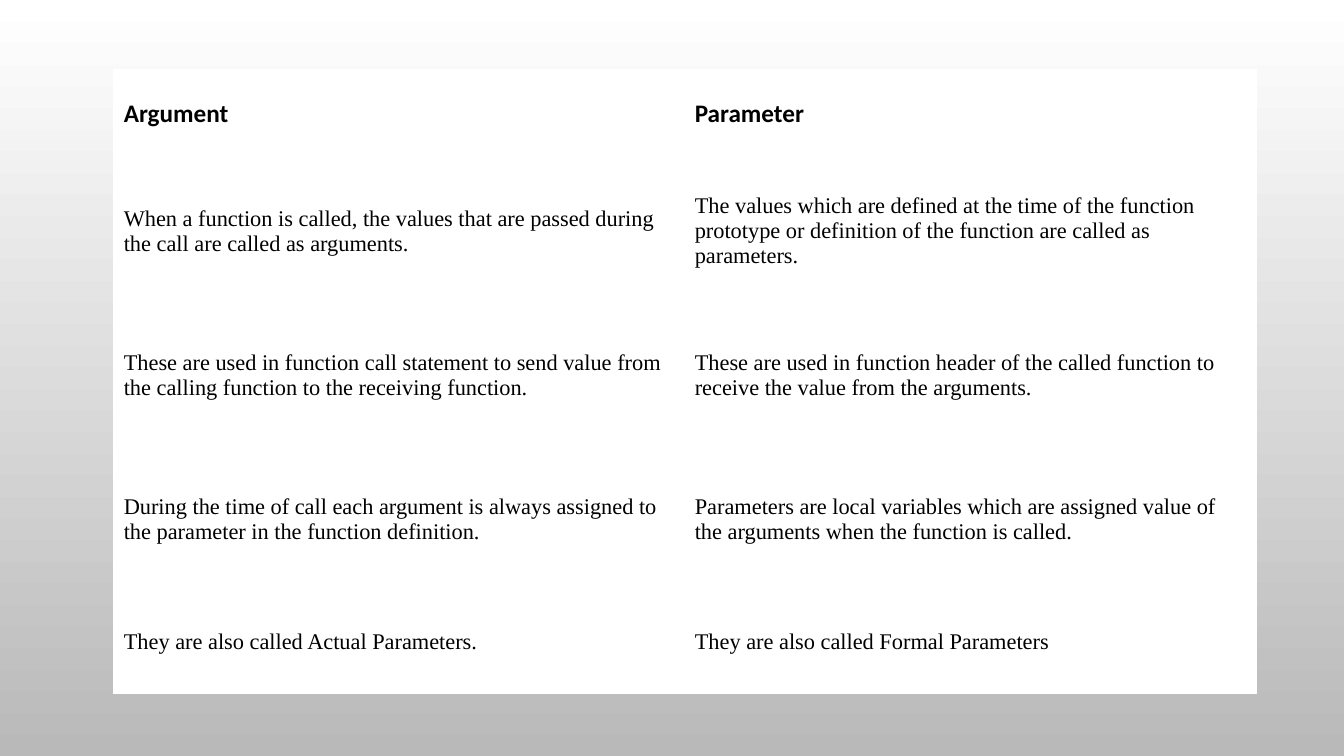
from pptx import Presentation
from pptx.dml.color import RGBColor
from pptx.enum.text import MSO_VERTICAL_ANCHOR as Anchor
from pptx.util import Cm, Pt

BLANK_LAYOUT = 6
COLUMN_WIDTH = 14.39
ROW_HEIGHTS = [2.26, 3.63, 3.63, 3.63, 2.57]

HEADER_FONT = {"name": "Calibri", "size": Pt(18), "bold": True}
BODY_FONT = {"name": "Times New Roman", "size": Pt(16), "bold": False}

COMPARISON = [
    ("Argument", "Parameter"),
    ("When a function is called, the values that are passed during the call "
     "are called as arguments.",
     "The values which are defined at the time of the function prototype or "
     "definition of the function are called as parameters."),
    ("These are used in function call statement to send value from the "
     "calling function to the receiving function.",
     "These are used in function header of the called function to receive "
     "the value from the arguments."),
    ("During the time of call each argument is always assigned to the "
     "parameter in the function definition.",
     "Parameters are local variables which are assigned value of the "
     "arguments when the function is called."),
    ("They are also called Actual Parameters.",
     "They are also called Formal Parameters"),
]


def color(hex_value):
    return RGBColor.from_string(hex_value)


def set_attributes(target, values):
    for name, value in values.items():
        setattr(target, name, value)


def paint_background(page, top, bottom):
    fill = page.background.fill
    fill.gradient()
    fill.gradient_angle = 270
    for stop, hex_value in zip(fill.gradient_stops, (top, bottom)):
        stop.color.rgb = color(hex_value)


def fill_cell(cell, text, font, vertical_margin):
    set_attributes(cell, {
        "vertical_anchor": Anchor.MIDDLE,
        "margin_left": Cm(0.25), "margin_right": Cm(0.25),
        "margin_top": Cm(vertical_margin), "margin_bottom": Cm(vertical_margin),
    })
    cell.fill.solid()
    cell.fill.fore_color.rgb = color("FFFFFF")
    span = cell.text_frame.paragraphs[0].add_run()
    span.text = text
    set_attributes(span.font, font)
    span.font.color.rgb = color("000000")


def add_comparison_table(page, left, top, rows):
    column_count = len(rows[0])
    frame = page.shapes.add_table(
        len(rows), column_count, Cm(left), Cm(top),
        Cm(COLUMN_WIDTH * column_count), Cm(sum(ROW_HEIGHTS)))
    table = frame.table
    for column in table.columns:
        column.width = Cm(COLUMN_WIDTH)
    for index, (texts, height) in enumerate(zip(rows, ROW_HEIGHTS)):
        table.rows[index].height = Cm(height)
        font, margin = (BODY_FONT, 0.38) if index else (HEADER_FONT, 0.25)
        for cell, text in zip(table.rows[index].cells, texts):
            fill_cell(cell, text, font, margin)


def main():
    # Widescreen deck with one blank page
    deck = Presentation()
    deck.slide_width, deck.slide_height = Cm(33.87), Cm(19.05)
    page = deck.slides.add_slide(deck.slide_layouts[BLANK_LAYOUT])

    # Grey gradient behind the white comparison table
    paint_background(page, "FFFFFF", "B9B9B9")
    add_comparison_table(page, 2.87, 1.75, COMPARISON)

    deck.save("out.pptx")


if __name__ == "__main__":
    main()
